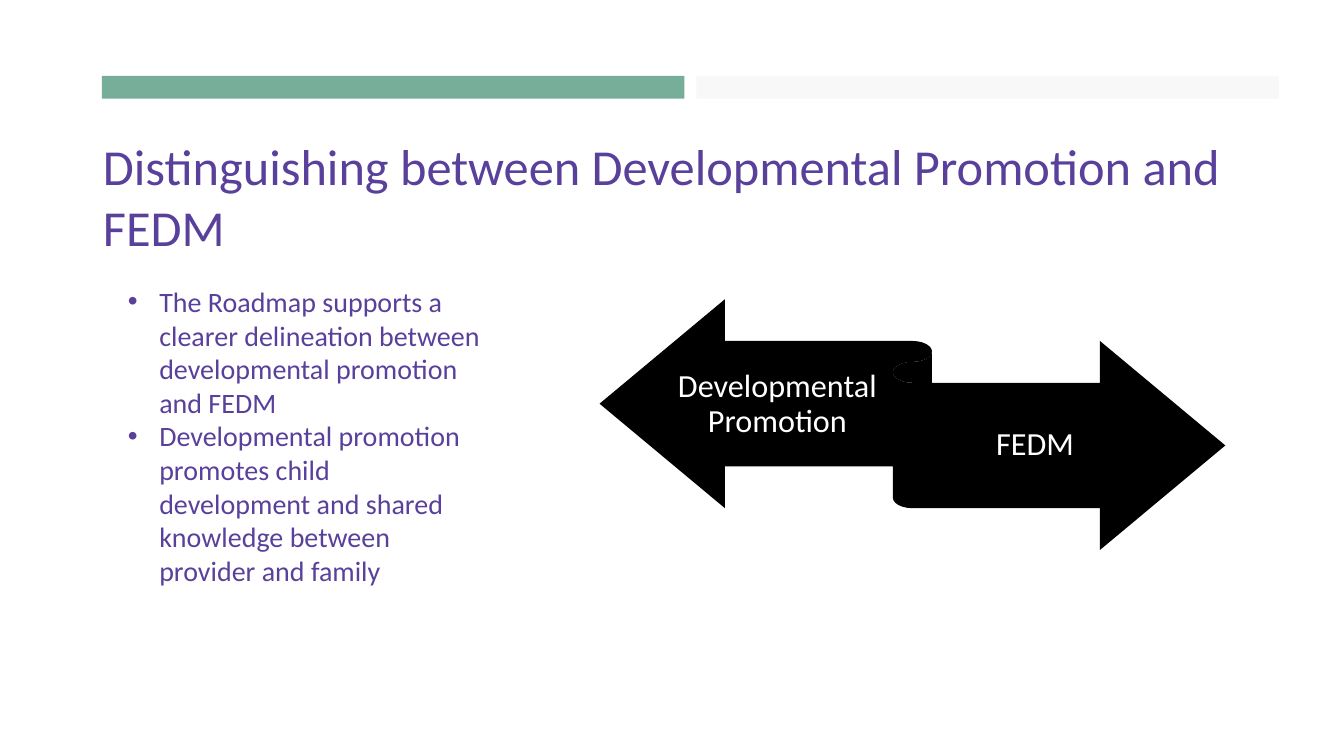
from lxml.etree import SubElement
from pptx import Presentation
from pptx.dml.color import RGBColor
from pptx.enum.shapes import MSO_SHAPE
from pptx.enum.text import MSO_ANCHOR, MSO_AUTO_SIZE, PP_ALIGN
from pptx.oxml.ns import qn
from pptx.util import Cm, Pt

TITLE = "Distinguishing between Developmental Promotion and FEDM"
BULLETS = [
    "The Roadmap supports a clearer delineation between developmental promotion and FEDM",
    "Developmental promotion promotes child development and shared knowledge between "
    "provider and family",
]
# Text, left, top, width in cm
RIBBON_LABELS = [
    ("Developmental Promotion", 16.99, 8.66, 5.21),
    ("FEDM", 23.01, 9.68, 6.15),
]
COLORS = {"green": "76AE99", "pale": "F8F8F8", "purple": "59409B",
          "black": "000000", "white": "FFFFFF"}
FONT = "Calibri"
BAR_LEFT, BAR_TOP, BAR_WIDTH, BAR_HEIGHT, BAR_GAP = 2.57, 1.91, 14.68, 0.58, 0.3
LABEL_HEIGHT = 3.1


def place(shape, left, top, width, height):
    shape.left, shape.top = Cm(left), Cm(top)
    shape.width, shape.height = Cm(width), Cm(height)


def add_filled(s, kind, box, color):
    shape = s.shapes.add_shape(kind, *map(Cm, box))
    shape.shadow.inherit = False
    shape.fill.solid()
    shape.fill.fore_color.rgb = RGBColor.from_string(COLORS[color])
    shape.line.fill.background()


def write(p, text, size, color, align):
    p.alignment = align
    p.space_before = Pt(0)
    r = p.add_run()
    r.text = text
    r.font.name, r.font.size = FONT, Pt(size)
    r.font.color.rgb = RGBColor.from_string(COLORS[color])


def set_bullet(p, indent):
    pPr = p._p.get_or_add_pPr()
    pPr.set("marL", str(Cm(indent)))
    pPr.set("indent", str(-Cm(indent)))
    SubElement(pPr, qn("a:buFont"), typeface="Arial")
    SubElement(pPr, qn("a:buChar"), char="•")


def set_frame(tf, anchor):
    tf.word_wrap = True
    tf.auto_size = MSO_AUTO_SIZE.NONE
    tf.vertical_anchor = anchor


def main():
    prs = Presentation()
    prs.slide_width, prs.slide_height = Cm(33.87), Cm(19.05)
    s = prs.slides.add_slide(prs.slide_layouts[1])

    for i, color in enumerate(("green", "pale")):
        left = BAR_LEFT + i * (BAR_WIDTH + BAR_GAP)
        add_filled(s, MSO_SHAPE.RECTANGLE, (left, BAR_TOP, BAR_WIDTH, BAR_HEIGHT), color)

    title = s.shapes.title
    place(title, 2.34, 3.28, 30.66, 3.33)
    set_frame(title.text_frame, MSO_ANCHOR.TOP)
    write(title.text_frame.paragraphs[0], TITLE, 36, "purple", PP_ALIGN.LEFT)

    body = s.placeholders[1]
    place(body, 2.97, 7.04, 9.5, 8.71)
    tf = body.text_frame
    set_frame(tf, MSO_ANCHOR.TOP)
    for i, text in enumerate(BULLETS):
        p = tf.add_paragraph() if i else tf.paragraphs[0]
        write(p, text, 20, "purple", PP_ALIGN.LEFT)
        set_bullet(p, 0.79)

    add_filled(s, MSO_SHAPE.LEFT_RIGHT_RIBBON, (15.11, 7.54, 15.77, 6.32), "black")
    for text, left, top, width in RIBBON_LABELS:
        label = s.shapes.add_textbox(Cm(left), Cm(top), Cm(width), Cm(LABEL_HEIGHT))
        tf = label.text_frame
        set_frame(tf, MSO_ANCHOR.MIDDLE)
        tf.margin_left = tf.margin_right = 0
        tf.margin_top, tf.margin_bottom = Cm(0.23), Cm(0.25)
        p = tf.paragraphs[0]
        write(p, text, 23, "white", PP_ALIGN.CENTER)
        p.line_spacing = 0.9

    prs.save("out.pptx")


if __name__ == "__main__":
    main()
